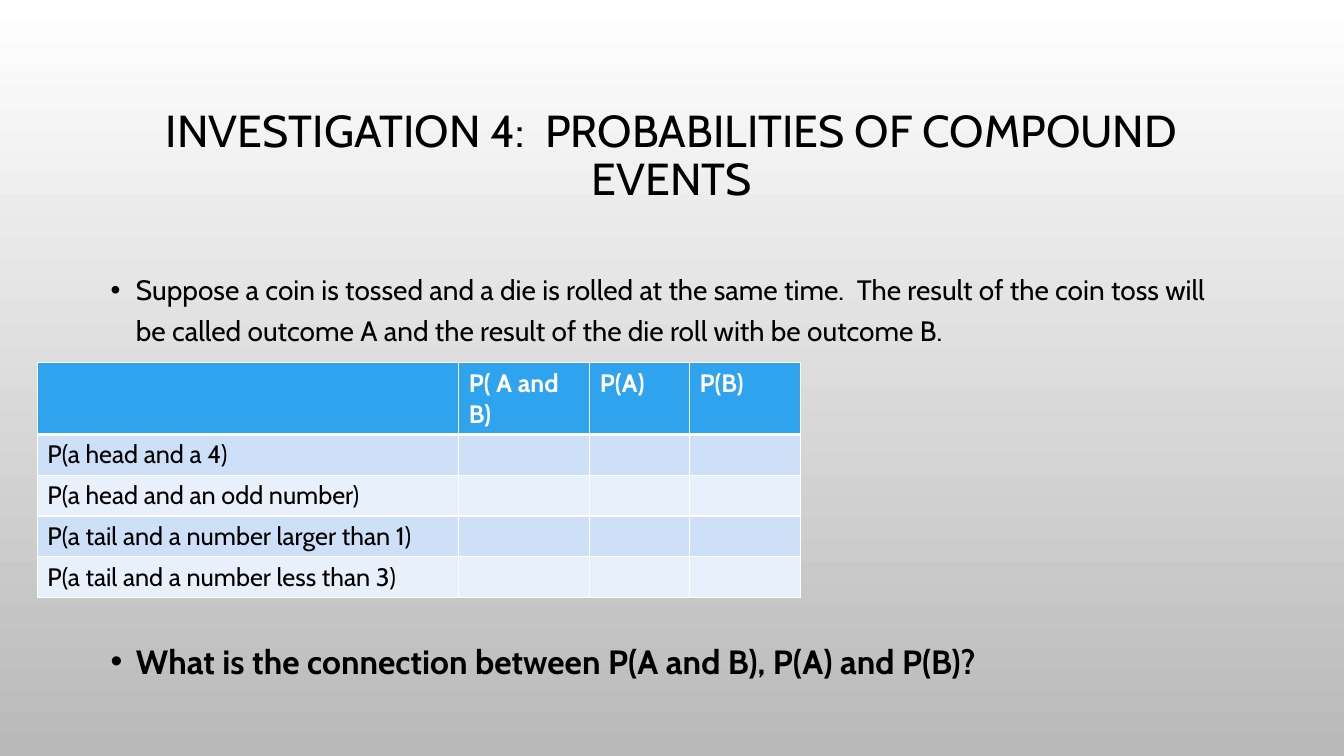
from lxml import etree
from pptx import Presentation
from pptx.dml.color import RGBColor
from pptx.enum.text import MSO_ANCHOR, PP_ALIGN
from pptx.oxml.ns import qn
from pptx.util import Inches, Pt

CENTER, MIDDLE, TOP = PP_ALIGN.CENTER, MSO_ANCHOR.MIDDLE, MSO_ANCHOR.TOP
WIDTH, HEIGHT = 13.33, 7.5
MARGIN = 1
TEXT_WIDTH = WIDTH - 2 * MARGIN
FONT, BLACK, WHITE = "Cabin", "000000", "FFFFFF"
BACKGROUND = [WHITE, "B9B9B9"]
HEADER_FILL, BAND_FILLS = "2FA3EE", ["CDE0F8", "E8F0FC"]

TITLE = "INVESTIGATION 4:  PROBABILITIES OF COMPOUND EVENTS"
SETUP = ("Suppose a coin is tossed and a die is rolled at the same time.  "
         "The result of the coin toss will be called outcome A and the result "
         "of the die roll with be outcome B.")
QUESTION = "What is the connection between P(A and B), P(A) and P(B)?"
HEADERS = ["", "P( A and B)", "P(A)", "P(B)"]
EVENTS = ["P(a head and a 4)", "P(a head and an odd number)",
          "P(a tail and a number larger than 1)",
          "P(a tail and a number less than 3)"]

TABLE_LEFT, TABLE_TOP = 0.37, 3.6
COLUMN_WIDTHS = [4.18, 1.3, 0.99, 1.1]
HEADER_HEIGHT, ROW_HEIGHT = 0.71, 0.405


def color(value):
    return RGBColor.from_string(value)


def style(font, size, shade=BLACK, bold=False):
    values = {"name": FONT, "size": Pt(size), "bold": bold}
    for name, value in values.items():
        setattr(font, name, value)
    font.color.rgb = color(shade)


def add_text(page, text, top, height, size, spacing, anchor=TOP, bold=False):
    box = page.shapes.add_textbox(Inches(MARGIN), Inches(top),
                                  Inches(TEXT_WIDTH), Inches(height))
    frame = box.text_frame
    frame.word_wrap = True
    frame.vertical_anchor = anchor
    para = frame.paragraphs[0]
    para.line_spacing = spacing
    span = para.add_run()
    span.text = text
    style(span.font, size, bold=bold)
    return para


def add_bullet(para):
    props = para._p.get_or_add_pPr()
    indent = Inches(0.25)
    props.set("marL", str(indent))
    props.set("indent", str(-indent))
    etree.SubElement(props, qn("a:buFont")).set("typeface", "Arial")
    etree.SubElement(props, qn("a:buChar")).set("char", "•")


def add_borders(cell, widths):
    """Draw white edges; widths maps side letters, in L R T B order, to points."""
    props = cell._tc.get_or_add_tcPr()
    for index, (side, width) in enumerate(widths.items()):
        line = etree.Element(qn(f"a:ln{side}"), w=str(Pt(width)))
        fill = etree.SubElement(line, qn("a:solidFill"))
        etree.SubElement(fill, qn("a:srgbClr")).set("val", WHITE)
        props.insert(index, line)


def add_probability_table(page):
    rows = [HEADERS] + [[event, "", "", ""] for event in EVENTS]
    heights = [HEADER_HEIGHT] + [ROW_HEIGHT] * len(EVENTS)
    table = page.shapes.add_table(
        len(rows), len(HEADERS), Inches(TABLE_LEFT), Inches(TABLE_TOP),
        Inches(sum(COLUMN_WIDTHS)), Inches(sum(heights))).table
    for column, width in zip(table.columns, COLUMN_WIDTHS):
        column.width = Inches(width)
    for r, (texts, height) in enumerate(zip(rows, heights)):
        table.rows[r].height = Inches(height)
        header = r == 0
        for c, text in enumerate(texts):
            cell = table.cell(r, c)
            cell.text = text
            style(cell.text_frame.paragraphs[0].font, 18,
                  WHITE if header else BLACK, header)
            cell.fill.solid()
            cell.fill.fore_color.rgb = color(
                HEADER_FILL if header else BAND_FILLS[(r - 1) % 2])
            add_borders(cell, {"L": 1, "R": 1, "T": 3 if r == 1 else 1,
                               "B": 3 if header else 1})


def main():
    deck = Presentation()
    deck.slide_width, deck.slide_height = Inches(WIDTH), Inches(HEIGHT)
    page = deck.slides.add_slide(deck.slide_layouts[6])
    backdrop = page.background.fill
    backdrop.gradient()
    backdrop.gradient_angle = 270
    for stop, shade in zip(backdrop.gradient_stops, BACKGROUND):
        stop.color.rgb = color(shade)

    title = add_text(page, TITLE, 0.68, 1.75, 32, 0.9, MIDDLE)
    title.alignment = CENTER
    add_bullet(add_text(page, SETUP, 2.59, 0.95, 20, 1.2))
    add_bullet(add_text(page, QUESTION, 6.23, 0.73, 24, 1.2, bold=True))
    add_probability_table(page)
    deck.save("out.pptx")


if __name__ == "__main__":
    main()
